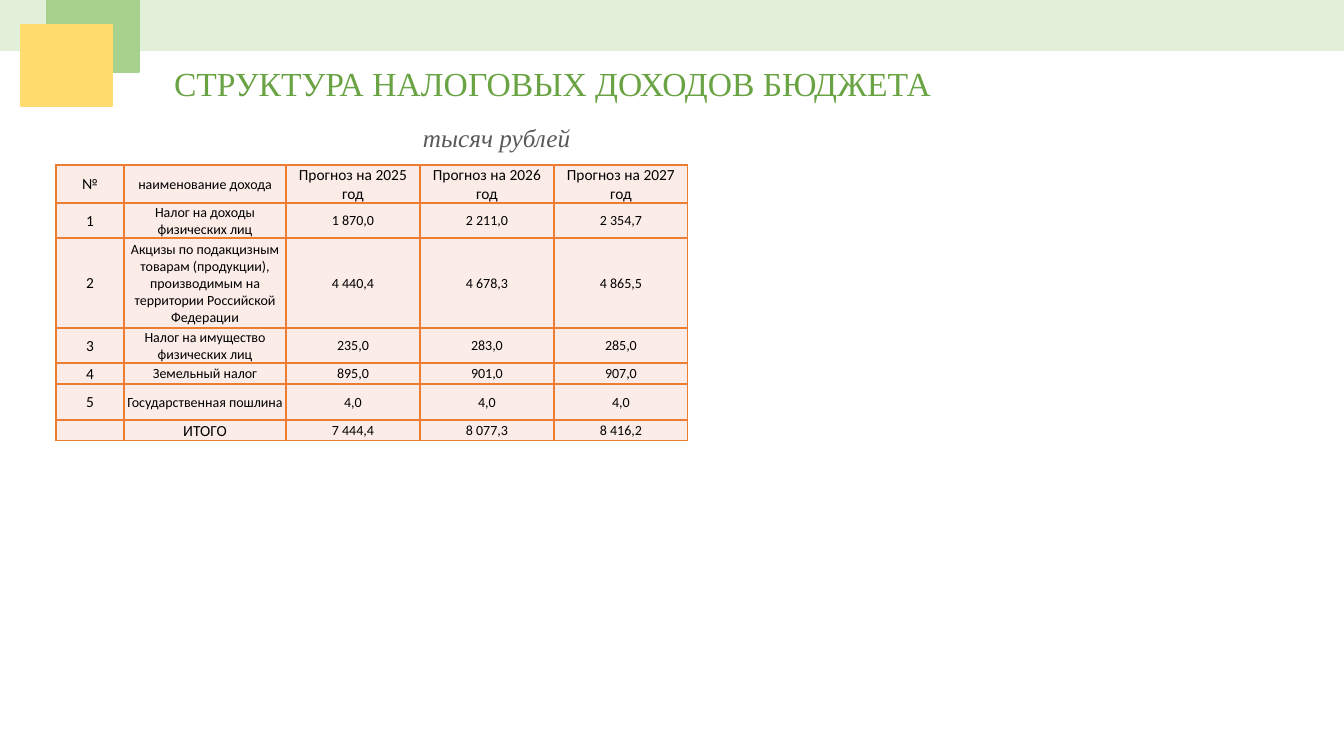
"""Build a slide with the table of forecast tax revenues of a budget."""
from dataclasses import dataclass

from lxml.etree import SubElement
from pptx import Presentation
from pptx.dml.color import RGBColor
from pptx.enum.shapes import MSO_SHAPE
from pptx.enum.text import MSO_ANCHOR as Anchor, MSO_AUTO_SIZE as AutoSize, PP_ALIGN as Align
from pptx.oxml.ns import qn
from pptx.util import Emu, Pt

SERIF = "Times New Roman"
SANS = "Calibri"
BORDER = "ED7D31"
CELL_FILL = "FCECE8"
COLUMN_WIDTHS = [68, 162, 134, 134, 134]
ROW_HEIGHTS = [38, 35, 90, 35, 21, 36, 21]
ROWS = [
    ["№", "наименование дохода"] + [f"Прогноз на {year} год" for year in (2025, 2026, 2027)],
    ["1", "Налог на доходы физических лиц", "1 870,0", "2 211,0", "2 354,7"],
    ["2", "Акцизы по подакцизным товарам (продукции), производимым на территории "
          "Российской Федерации", "4 440,4", "4 678,3", "4 865,5"],
    ["3", "Налог на имущество физических лиц", "235,0", "283,0", "285,0"],
    ["4", "Земельный налог", "895,0", "901,0", "907,0"],
    ["5", "Государственная пошлина", "4,0", "4,0", "4,0"],
    ["", "ИТОГО", "7 444,4", "8 077,3", "8 416,2"],
]


@dataclass
class Block:
    left: int
    top: int
    width: int
    height: int
    color: str


@dataclass
class Caption:
    left: int
    top: int
    width: int
    height: int
    text: str
    size: int
    color: str
    italic: bool = False


BLOCKS = [
    Block(0, 0, 1344, 50, "E2F0D9"),
    Block(47, 0, 92, 72, "A9D18E"),
    Block(21, 25, 91, 81, "FFDC6D"),
]
TITLE = Caption(164, 58, 785, 50, "СТРУКТУРА НАЛОГОВЫХ ДОХОДОВ БЮДЖЕТА", 24, "6AA343")
UNITS = Caption(413, 117, 169, 40, "тысяч рублей", 18, "595959", True)


def px(length: int) -> Emu:
    return Emu(round(length * 914400 / 100.8))


def rgb(color: str) -> RGBColor:
    return RGBColor.from_string(color)


def add_span(para, text: str, font: str, size: int, color: str, italic: bool = False) -> None:
    span = para.add_run()
    span.text = text
    span.font.name = font
    span.font.size = Pt(size)
    span.font.italic = italic
    span.font.color.rgb = rgb(color)


def add_block(page, block: Block) -> None:
    shape = page.shapes.add_shape(MSO_SHAPE.RECTANGLE, px(block.left), px(block.top),
                                  px(block.width), px(block.height))
    shape.shadow.inherit = False
    shape.fill.solid()
    shape.fill.fore_color.rgb = rgb(block.color)
    shape.line.color.rgb = rgb(block.color)
    shape.line.width = Pt(1)


def write_caption(box, caption: Caption) -> None:
    box.left, box.top = px(caption.left), px(caption.top)
    box.width, box.height = px(caption.width), px(caption.height)
    frame = box.text_frame
    frame.word_wrap = False
    frame.auto_size = AutoSize.SHAPE_TO_FIT_TEXT
    frame.vertical_anchor = Anchor.TOP
    para = frame.paragraphs[0]
    para.alignment = Align.LEFT
    add_span(para, caption.text, SERIF, caption.size, caption.color, caption.italic)


def add_borders(cell) -> None:
    properties = cell._tc.get_or_add_tcPr()
    for position, side in enumerate(("a:lnL", "a:lnR", "a:lnT", "a:lnB")):
        line = SubElement(properties, qn(side), w=str(Pt(1)))
        fill = SubElement(line, qn("a:solidFill"))
        SubElement(fill, qn("a:srgbClr"), val=BORDER)
        properties.insert(position, line)


def write_cell(cell, text: str, size: int, anchor: Anchor) -> None:
    cell.fill.solid()
    cell.fill.fore_color.rgb = rgb(CELL_FILL)
    add_borders(cell)
    cell.margin_left = cell.margin_right = cell.margin_top = px(1)
    cell.margin_bottom = 0
    cell.vertical_anchor = anchor
    para = cell.text_frame.paragraphs[0]
    para.alignment = Align.CENTER
    if text:
        add_span(para, text, SANS, size, "000000")
    else:
        SubElement(para._p, qn("a:endParaRPr"), sz=str(size * 100))


def add_revenue_table(page) -> None:
    table = page.shapes.add_table(len(ROWS), len(COLUMN_WIDTHS), px(56), px(165),
                                  px(sum(COLUMN_WIDTHS)), px(sum(ROW_HEIGHTS))).table
    table.first_row = table.horz_banding = False
    for column, width in zip(table.columns, COLUMN_WIDTHS):
        column.width = px(width)
    for row, height in zip(table.rows, ROW_HEIGHTS):
        row.height = px(height)
    for row_index, texts in enumerate(ROWS):
        for column_index, text in enumerate(texts):
            year_heading = row_index == 0 and column_index > 1
            total_label = text == "ИТОГО"
            size = 11 if year_heading or total_label or column_index == 0 else 10
            anchor = Anchor.BOTTOM if year_heading or total_label else Anchor.MIDDLE
            write_cell(table.cell(row_index, column_index), text, size, anchor)


def main() -> None:
    deck = Presentation()
    deck.slide_width, deck.slide_height = px(1344), px(756)
    page = deck.slides.add_slide(deck.slide_layouts[5])
    write_caption(page.shapes.title, TITLE)
    for block in BLOCKS:
        add_block(page, block)
    write_caption(page.shapes.add_textbox(0, 0, 0, 0), UNITS)
    add_revenue_table(page)
    deck.save("out.pptx")


if __name__ == "__main__":
    main()
